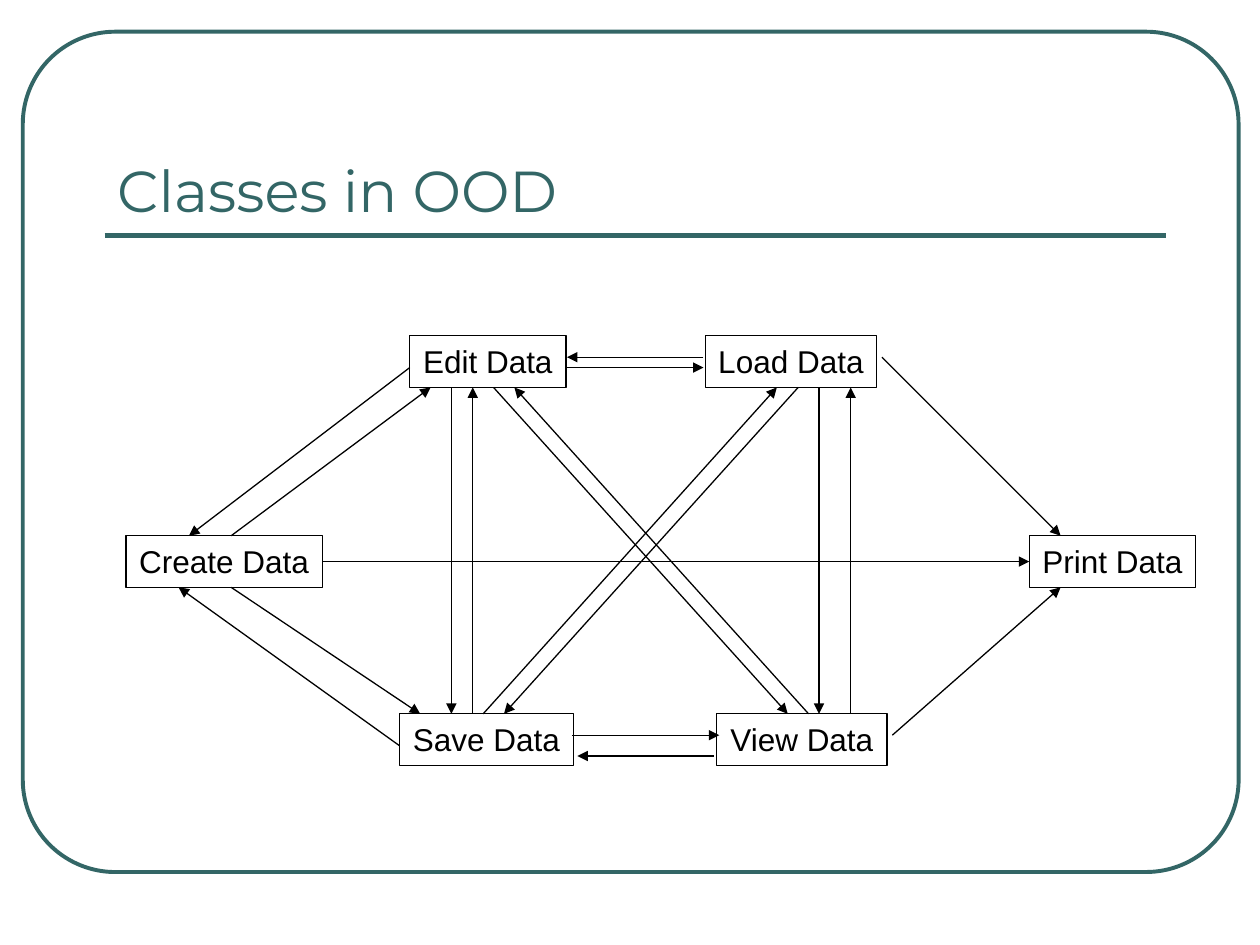
from lxml import etree
from pptx import Presentation
from pptx.dml.color import RGBColor
from pptx.enum import shapes, text
from pptx.oxml import ns
from pptx.util import Cm, Pt

TEAL, BLACK = "336666", "000000"
TITLE = "Classes in OOD"
BOX_HEIGHT = 1.04
TOP_ROW, MIDDLE_ROW, BOTTOM_ROW = 6.77, 10.8, 14.39
UNDER_TOP, UNDER_MIDDLE = TOP_ROW + BOX_HEIGHT, MIDDLE_ROW + BOX_HEIGHT

CLASSES = [
    ("Create Data", 2.54, MIDDLE_ROW, 3.96),
    ("Edit Data", 8.26, TOP_ROW, 3.15),
    ("Save Data", 8.05, BOTTOM_ROW, 3.51),
    ("Load Data", 14.22, TOP_ROW, 3.45),
    ("View Data", 14.45, BOTTOM_ROW, 3.43),
    ("Print Data", 20.75, MIDDLE_ROW, 3.35),
]

ARROWS = [
    (4.66, MIDDLE_ROW, 8.68, UNDER_TOP),
    (8.26, 7.41, 3.81, MIDDLE_ROW),
    (4.66, UNDER_MIDDLE, 8.47, BOTTOM_ROW),
    (8.05, 15.03, 3.6, UNDER_MIDDLE),
    (11.43, 7.41, 14.18, 7.41),
    (14.18, 7.2, 11.43, 7.2),
    (11.53, 14.82, 14.5, 14.82),
    (14.39, 15.24, 11.64, 15.24),
    (17.78, 7.2, 21.38, MIDDLE_ROW),
    (17.99, 14.82, 21.38, UNDER_MIDDLE),
    (9.95, UNDER_TOP, 15.88, BOTTOM_ROW),
    (16.3, BOTTOM_ROW, 10.37, UNDER_TOP),
    (9.74, BOTTOM_ROW, 15.66, UNDER_TOP),
    (16.09, UNDER_TOP, 10.16, BOTTOM_ROW),
    (16.51, UNDER_TOP, 16.51, BOTTOM_ROW),
    (17.15, BOTTOM_ROW, 17.15, UNDER_TOP),
    (9.1, UNDER_TOP, 9.1, BOTTOM_ROW),
    (9.53, BOTTOM_ROW, 9.53, UNDER_TOP),
]


def color(hex_string):
    return RGBColor.from_string(hex_string)


def set_line(shape, hex_string, width):
    shape.line.color.rgb = color(hex_string)
    shape.line.width = Pt(width)


def add_outline(slide, kind, bounds, hex_string, width):
    shape = slide.shapes.add_shape(kind, *map(Cm, bounds))
    shape.shadow.inherit = False
    shape.fill.background()
    set_line(shape, hex_string, width)
    return shape


def add_line(slide, points, hex_string, width, arrow=False):
    connector = slide.shapes.add_connector(
        shapes.MSO_CONNECTOR.STRAIGHT, *map(Cm, points))
    set_line(connector, hex_string, width)
    if arrow:
        etree.SubElement(connector.line._get_or_add_ln(),
                         ns.qn("a:tailEnd"), type="triangle")
    etree.SubElement(connector._element.spPr, ns.qn("a:effectLst"))
    return connector


def write(shape, words, font, size, hex_string, alignment):
    paragraph = shape.text_frame.paragraphs[0]
    paragraph.alignment = alignment
    run = paragraph.add_run()
    run.text = words
    run.font.name = font
    run.font.size = Pt(size)
    run.font.color.rgb = color(hex_string)


def add_title(slide):
    title = slide.shapes.add_textbox(Cm(2.11), Cm(1.47), Cm(21.39), Cm(3.18))
    title.text_frame.word_wrap = True
    title.text_frame.vertical_anchor = text.MSO_ANCHOR.BOTTOM
    write(title, TITLE, "Montserrat", 33, TEAL, text.PP_ALIGN.LEFT)


def add_class(slide, name, left, top, width):
    box = add_outline(slide, shapes.MSO_SHAPE.RECTANGLE,
                      (left, top, width, BOX_HEIGHT), BLACK, 0.75)
    box.text_frame.word_wrap = False
    box.text_frame.auto_size = text.MSO_AUTO_SIZE.SHAPE_TO_FIT_TEXT
    box.text_frame.vertical_anchor = text.MSO_ANCHOR.TOP
    write(box, name, "Arial", 18, BLACK, text.PP_ALIGN.CENTER)
    return box


def main():
    presentation = Presentation()
    presentation.slide_width, presentation.slide_height = Cm(25.4), Cm(19.05)
    slide = presentation.slides.add_slide(presentation.slide_layouts[6])

    frame = add_outline(slide, shapes.MSO_SHAPE.ROUNDED_RECTANGLE,
                        (0.46, 0.64, 24.51, 16.94), TEAL, 2.25)
    frame.adjustments[0] = 0.11
    add_line(slide, (2.11, 4.75, 23.5, 4.75), TEAL, 3)
    add_title(slide)

    boxes = {row[0]: add_class(slide, *row) for row in CLASSES}
    for points in ARROWS:
        add_line(slide, points, BLACK, 0.75, arrow=True)
    create_to_print = add_line(slide, (6.5, 11.32, 20.75, 11.32),
                               BLACK, 0.75, arrow=True)
    create_to_print.begin_connect(boxes["Create Data"], 3)
    create_to_print.end_connect(boxes["Print Data"], 1)

    presentation.save("out.pptx")


if __name__ == "__main__":
    main()
